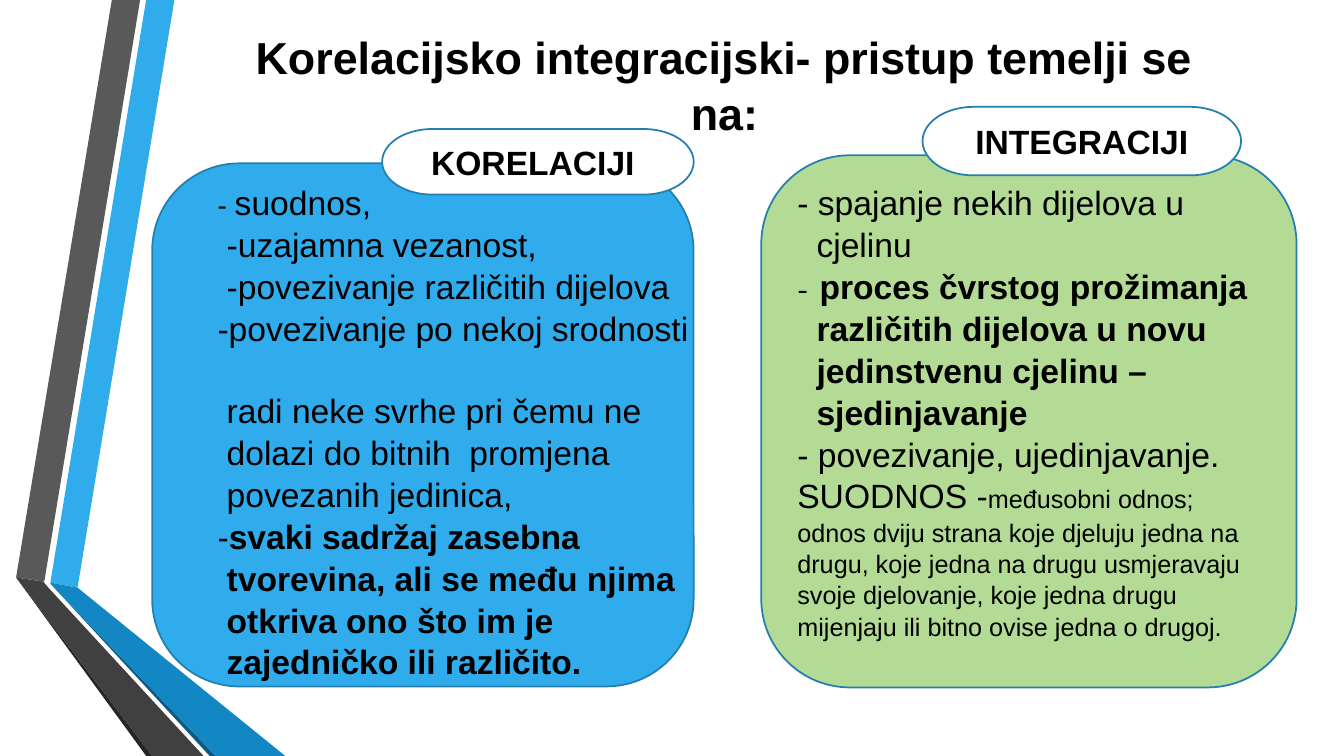
import pptx
import pptx.dml.color
import pptx.enum.shapes
import pptx.enum.text
import pptx.util

RGB = pptx.dml.color.RGBColor
SHAPE = pptx.enum.shapes.MSO_SHAPE
ALIGN = pptx.enum.text.PP_ALIGN
ANCHOR = pptx.enum.text.MSO_ANCHOR

BLACK = RGB(0x00, 0x00, 0x00)
WHITE = RGB(0xFF, 0xFF, 0xFF)
BLUE = RGB(0x30, 0xAC, 0xEC)
MID_BLUE = RGB(0x12, 0x87, 0xC3)
DEEP_BLUE = RGB(0x0C, 0x5A, 0x82)
OUTLINE = RGB(0x24, 0x7F, 0xAF)
GREEN = RGB(0xB3, 0xDB, 0x95)
GREY = RGB(0x59, 0x59, 0x59)
DARK_GREY = RGB(0x40, 0x40, 0x40)
NEAR_BLACK = RGB(0x26, 0x26, 0x26)

SCALE = 9144
STEP = 9
HANG = 19


class SlideBuilder:
    """Draws ribbons, panels, labels and text on one blank slide."""

    def __init__(self, width, height):
        self.deck = pptx.Presentation()
        self.deck.slide_width = width * SCALE
        self.deck.slide_height = height * SCALE
        self.shapes = self.deck.slides.add_slide(self.deck.slide_layouts[6]).shapes

    def ribbon(self, points, color):
        outline = self.shapes.build_freeform(*points[0], scale=SCALE)
        outline.add_line_segments(points[1:], close=True)
        band = outline.convert_to_shape()
        band.shadow.inherit = False
        band.fill.solid()
        band.fill.fore_color.rgb = color
        band.line.fill.background()

    def panel(self, kind, box, color):
        panel = self.shapes.add_shape(kind, *(n * SCALE for n in box))
        panel.shadow.inherit = False
        panel.fill.solid()
        panel.fill.fore_color.rgb = color
        panel.line.color.rgb = OUTLINE
        panel.line.width = pptx.util.Pt(1.25)
        return panel

    def label(self, box, wording, align, margin=10):
        frame = self.panel(SHAPE.FLOWCHART_TERMINATOR, box, WHITE).text_frame
        frame.word_wrap = True
        frame.vertical_anchor = ANCHOR.MIDDLE
        frame.margin_left = margin * SCALE
        frame.paragraphs[0].alignment = align
        self.run(frame.paragraphs[0], wording, bold=True)

    def text(self, box, paragraphs, align=ALIGN.LEFT):
        frame = self.shapes.add_textbox(*(n * SCALE for n in box)).text_frame
        frame.word_wrap = True
        for number, (indent, first, gap, runs) in enumerate(paragraphs):
            paragraph = frame.add_paragraph() if number else frame.paragraphs[0]
            paragraph.alignment = align
            paragraph.line_spacing = 1.04
            if gap:
                paragraph.space_before = pptx.util.Pt(gap)
            properties = paragraph._p.get_or_add_pPr()
            properties.set("marL", str(indent * SCALE))
            properties.set("indent", str(first * SCALE))
            for wording, style in runs:
                self.run(paragraph, wording, **style)

    def run(self, paragraph, wording, size=24, bold=False, face="Arial"):
        run = paragraph.add_run()
        run.text = wording
        run.font.name = face
        run.font.size = pptx.util.Pt(size)
        run.font.bold = bold
        run.font.color.rgb = BLACK


def line(wording, indent=0, gap=0, **style):
    return indent, 0, gap, [(wording, style)]


RIBBONS = [
    ([(50, 578), (77, 583), (173, 0), (145, 0)], BLUE),
    ([(139, 0), (111, 0), (16, 573), (44, 577)], GREY),
    ([(16, 573), (145, 750), (151, 750)], NEAR_BLACK),
    ([(50, 579), (208, 750), (214, 750)], DEEP_BLUE),
    ([(50, 579), (214, 750), (283, 750), (77, 583), (50, 578)], MID_BLUE),
    ([(202, 750), (48, 583), (43, 577), (16, 573), (151, 750)], DARK_GREY),
]

CORRELATION = [
    (0, 0, 0, [("- ", {"size": 20}), ("suodnos,", {})]),
    line("-uzajamna vezanost,", STEP),
    line("-povezivanje različitih dijelova", STEP),
    line("-povezivanje po nekoj srodnosti"),
    line("radi neke svrhe pri čemu ne", STEP, gap=28.8),
    line("dolazi do bitnih  promjena", STEP),
    line("povezanih jedinica,", STEP),
    (0, 0, 0, [("-", {}), ("svaki sadržaj zasebna", {"bold": True})]),
    line("tvorevina, ali se među njima", STEP, bold=True),
    line("otkriva ono što im je", STEP, bold=True),
    line("zajedničko ili različito.", STEP, bold=True),
]

INTEGRATION = [
    line("- spajanje nekih dijelova u"),
    line("cjelinu", HANG),
    (22, -22, 0, [("-\t", {"size": 18, "face": "Cabin"}),
                  ("proces čvrstog prožimanja", {"bold": True})]),
    line("različitih dijelova u novu", HANG, bold=True),
    line("jedinstvenu cjelinu –", HANG, bold=True),
    line("sjedinjavanje", HANG, bold=True),
    line("- povezivanje, ujedinjavanje."),
    (0, 0, 0, [
        ("SUODNOS -", {}),
        ("međusobni odnos; odnos dviju strana koje djeluju jedna na drugu, "
         "koje jedna na drugu usmjeravaju svoje djelovanje, koje jedna drugu "
         "mijenjaju ili bitno ovise jedna o drugoj.", {"size": 18}),
    ]),
]


def main():
    slide = SlideBuilder(1333, 750)
    for points, color in RIBBONS:
        slide.ribbon(points, color)
    heading = line("Korelacijsko integracijski- pristup temelji se na:", size=32, bold=True)
    slide.text((231, 22, 975, 172), [heading], ALIGN.CENTER)
    slide.panel(SHAPE.FLOWCHART_ALTERNATE_PROCESS, (151, 162, 537, 519), BLUE)
    slide.text((206, 174, 494, 495), CORRELATION)
    slide.panel(SHAPE.FLOWCHART_ALTERNATE_PROCESS, (755, 154, 531, 528), GREEN)
    slide.text((781, 174, 481, 535), INTEGRATION)
    slide.label((379, 128, 309, 65), "KORELACIJI", ALIGN.LEFT, margin=34)
    slide.label((915, 106, 316, 68), "INTEGRACIJI", ALIGN.CENTER)
    slide.deck.save("out.pptx")


if __name__ == "__main__":
    main()
